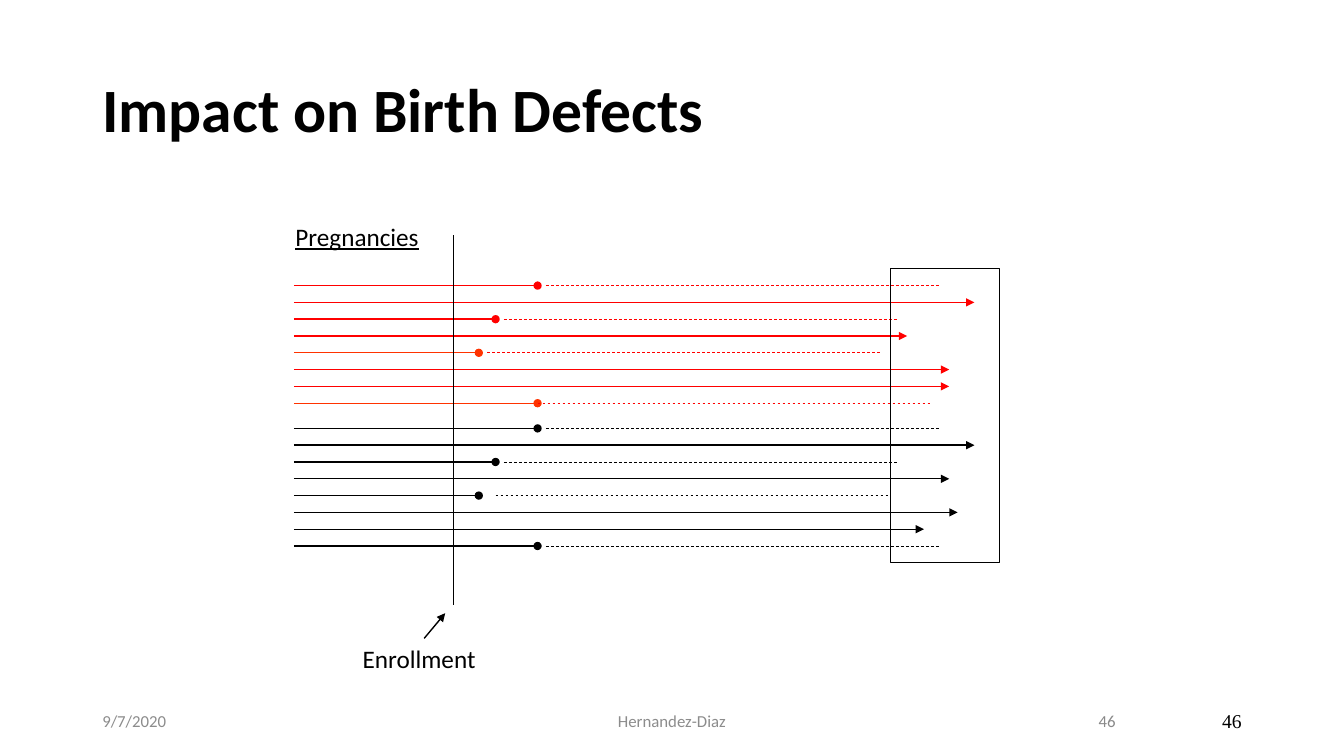
import lxml.etree
import pptx
import pptx.dml.color
import pptx.enum.dml
import pptx.enum.shapes
import pptx.enum.text
import pptx.oxml.ns
import pptx.util

PX = 9525  # EMU per px, 96 px to the inch

RED = pptx.dml.color.RGBColor(0xFF, 0x00, 0x00)
ORANGE = pptx.dml.color.RGBColor(0xFF, 0x33, 0x00)
BLACK = pptx.dml.color.RGBColor(0x00, 0x00, 0x00)
DATE_GREY = pptx.dml.color.RGBColor(0x8C, 0x8C, 0x8C)
NUMBER_GREY = pptx.dml.color.RGBColor(0x89, 0x89, 0x89)

ALIGN = pptx.enum.text.PP_ALIGN
MIDDLE = pptx.enum.text.MSO_ANCHOR.MIDDLE

ROW_START = 280
ROW_STEP = 16
LOST_LENGTH = 376

# Each pregnancy: colour, where follow-up ends, where the lost part starts (None if observed to birth)
EXPOSED = [
    (RED, 512, 520), (RED, 928, None), (RED, 472, 480), (RED, 864, None),
    (ORANGE, 456, 464), (RED, 904, None), (RED, 904, None), (ORANGE, 512, 512),
]
UNEXPOSED = [
    (BLACK, 512, 520), (BLACK, 928, None), (BLACK, 472, 480), (BLACK, 904, None),
    (BLACK, 456, 472), (BLACK, 912, None), (BLACK, 880, None), (BLACK, 512, 520),
]


def px(*lengths):
    return [pptx.util.Emu(length * PX) for length in lengths]


def format_text(shape, text, paragraph_format, font_format, color):
    paragraph = shape.text_frame.paragraphs[0]
    paragraph.text = text
    for name, value in paragraph_format.items():
        setattr(paragraph, name, value)
    font = paragraph.runs[0].font
    for name, value in font_format.items():
        setattr(font, name, value)
    font.color.rgb = color


def add_title(slide, text):
    title = slide.shapes.title
    title.left, title.top, title.width, title.height = px(88, 38, 1104, 139)
    title.text_frame.vertical_anchor = MIDDLE
    format_text(title, text, {"alignment": ALIGN.LEFT, "line_spacing": 0.9},
                {"name": "Calibri", "size": pptx.util.Pt(44), "bold": True}, BLACK)


def add_text(slide, box, text, size, color=BLACK, font="Calibri",
             align=ALIGN.LEFT, underline=None):
    label = slide.shapes.add_textbox(*px(*box))
    label.text_frame.word_wrap = True
    format_text(label, text, {"alignment": align},
                {"name": font, "size": pptx.util.Pt(size), "underline": underline}, color)
    return label


def add_footer(slide, left, width, text, size, **style):
    footer = add_text(slide, (left, 667, width, 38), text, size, **style)
    footer.text_frame.vertical_anchor = MIDDLE


def add_line(slide, start, end, color=BLACK, width=1, dashed=False, tip=None):
    """Draw a straight line; tip is the kind of mark at its end."""
    connector = slide.shapes.add_connector(
        pptx.enum.shapes.MSO_CONNECTOR.STRAIGHT, *px(*start, *end))
    connector.line.color.rgb = color
    connector.line.width = pptx.util.Pt(width)
    if dashed:
        connector.line.dash_style = pptx.enum.dml.MSO_LINE.DASH
    qn = pptx.oxml.ns.qn
    if tip:
        lxml.etree.SubElement(connector.line._get_or_add_ln(), qn("a:tailEnd"), type=tip)
    lxml.etree.SubElement(connector._element.spPr, qn("a:effectLst"))


def add_pregnancies(slide, top, pregnancies):
    for row, (color, end, lost_from) in enumerate(pregnancies):
        y = top + row * ROW_STEP
        tip = "triangle" if lost_from is None else "oval"
        add_line(slide, (ROW_START, y), (end, y), color, tip=tip)
        if lost_from is not None:
            lost_color = BLACK if color == BLACK else RED
            add_line(slide, (lost_from, y), (lost_from + LOST_LENGTH, y),
                     lost_color, width=0.5, dashed=True)


def add_birth_window(slide):
    window = slide.shapes.add_shape(
        pptx.enum.shapes.MSO_SHAPE.RECTANGLE, *px(848, 256, 104, 280))
    window.shadow.inherit = False
    window.fill.background()
    window.line.color.rgb = BLACK
    window.line.width = pptx.util.Pt(1)


def main():
    deck = pptx.Presentation()
    deck.slide_width, deck.slide_height = px(1280, 720)
    slide = deck.slides.add_slide(deck.slide_layouts[5])

    add_title(slide, "Impact on Birth Defects")
    add_text(slide, (272, 206, 288, 38), "Pregnancies", 18, underline=True)
    add_pregnancies(slide, 272, EXPOSED)
    add_pregnancies(slide, 408, UNEXPOSED)
    add_birth_window(slide)

    add_line(slide, (432, 224), (432, 576))
    add_text(slide, (336, 608, 136, 38), "Enrollment", 18)
    add_line(slide, (404, 608), (424, 584), tip="triangle")

    add_footer(slide, 88, 288, "9/7/2020", 12, color=DATE_GREY)
    add_footer(slide, 424, 432, "Hernandez-Diaz", 12, color=DATE_GREY, align=ALIGN.CENTER)
    add_footer(slide, 848, 224, "46", 12, color=NUMBER_GREY, align=ALIGN.RIGHT)
    add_footer(slide, 904, 288, "46", 14, font="Times New Roman", align=ALIGN.RIGHT)

    deck.save("out.pptx")


if __name__ == "__main__":
    main()
